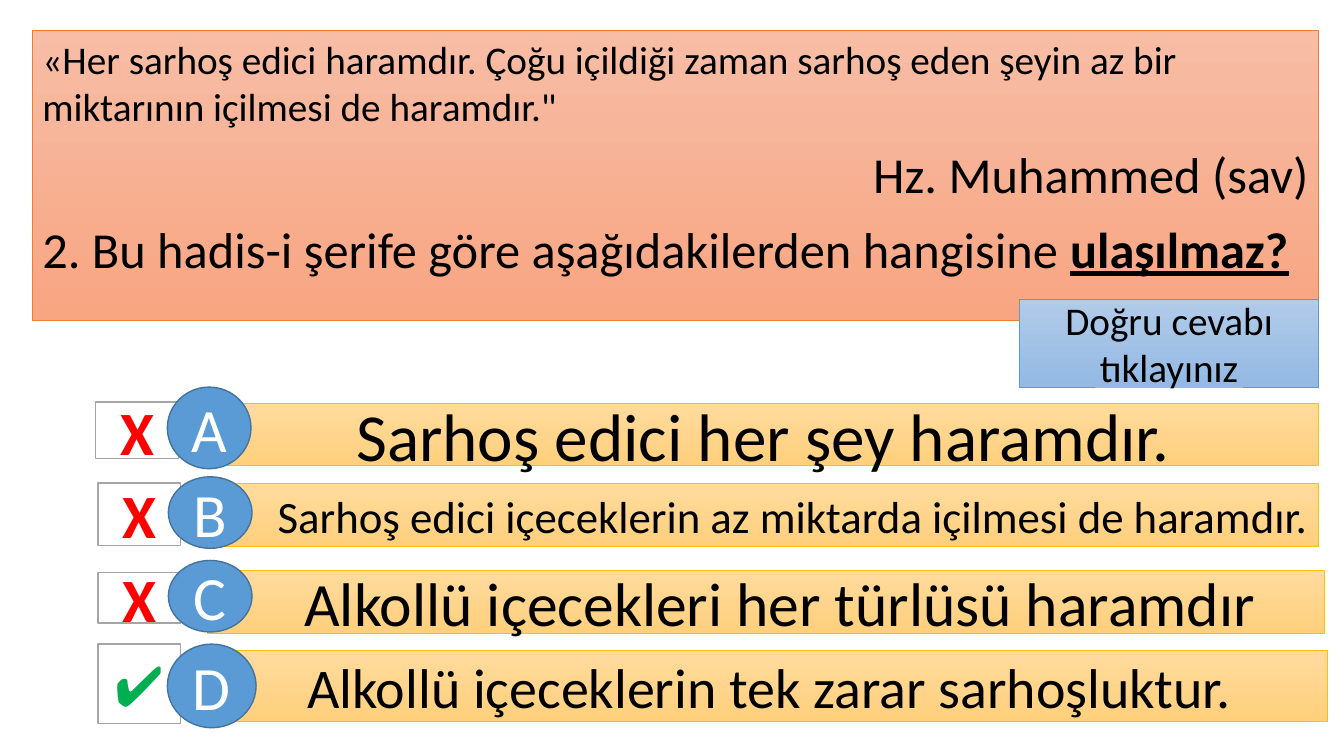
import pptx
import pptx.util
import pptx.dml.color
import pptx.enum.shapes
import pptx.enum.text
from pptx.util import Inches

COLORS = {
    "black": "000000", "white": "FFFFFF", "red": "FF0000", "green": "00B050",
    "gray": "A5A5A5", "blue": "5B9BD5", "navy": "43739E", "orange": "ED7D31", "gold": "FFC000",
    "salmon top": "F7BDA5", "salmon bottom": "F8A582",
    "sand top": "FFDB9E", "sand bottom": "FFD07C",
    "sky top": "B1CBE9", "sky bottom": "93B9E4",
}
ALIGN = pptx.enum.text.PP_ALIGN
SHAPE = pptx.enum.shapes.MSO_SHAPE

# letter, mark box, answer bar, circle, answer, size, alignment, left margin
ANSWERS = [
    ("A", (0.95, 3.99, 0.82, 0.56), (2.06, 4, 11.02, 0.62), (1.66, 3.84, 0.83, 0.81),
     "Sarhoş edici her şey haramdır.", 48, ALIGN.CENTER, 0.1),
    ("B", (0.97, 4.79, 0.82, 0.62), (1.96, 4.8, 11.12, 0.62), (1.67, 4.73, 0.83, 0.71),
     "Sarhoş edici içeceklerin az miktarda içilmesi de haramdır.", 32, ALIGN.RIGHT, 0.1),
    ("C", (0.97, 5.68, 0.82, 0.5), (2.06, 5.66, 11.08, 0.62), (1.67, 5.56, 0.83, 0.71),
     "Alkollü içecekleri her türlüsü haramdır", 44, ALIGN.CENTER, 0.38),
    ("D", (0.97, 6.39, 0.82, 0.79), (2.09, 6.45, 11.08, 0.71), (1.66, 6.39, 0.88, 0.83),
     "Alkollü içeceklerin tek zarar sarhoşluktur.", 40, ALIGN.CENTER, 0.1),
]
CORRECT = "D"


def rgb(name):
    return pptx.dml.color.RGBColor.from_string(COLORS[name])


def add_text(paragraph, text, size, color="black", bold=False, underline=False,
             align=ALIGN.CENTER):
    paragraph.alignment = align
    run = paragraph.add_run()
    run.text = text
    font = run.font
    font.name = "Calibri"
    font.size = pptx.util.Pt(size)
    font.bold = bold
    font.underline = underline
    font.color.rgb = rgb(color)


def paint(shape, fill, line, line_width):
    """Fill with one colour, or top to bottom with a pair of colours."""
    if isinstance(fill, tuple):
        shape.fill.gradient()
        shape.fill.gradient_angle = 270
        for stop, color in zip(shape.fill.gradient_stops, fill):
            stop.color.rgb = rgb(color)
    else:
        shape.fill.solid()
        shape.fill.fore_color.rgb = rgb(fill)
    shape.line.color.rgb = rgb(line)
    shape.line.width = pptx.util.Pt(line_width)


def add_box(slide, bounds, text, size, fill, line, line_width=1.0,
            kind=SHAPE.RECTANGLE, margin_left=0.1, **text_format):
    shape = slide.shapes.add_shape(kind, *map(Inches, bounds))
    shape.shadow.inherit = False
    paint(shape, fill, line, line_width)
    frame = shape.text_frame
    frame.word_wrap = True
    frame.margin_left = Inches(margin_left)
    frame.vertical_anchor = pptx.enum.text.MSO_ANCHOR.MIDDLE
    add_text(frame.paragraphs[0], text, size, **text_format)


def add_plain_paragraph(frame, first=False):
    """Return a paragraph without the placeholder's bullet and indent."""
    paragraph = frame.paragraphs[0] if first else frame.add_paragraph()
    paragraph.space_before = pptx.util.Pt(10)
    paragraph.line_spacing = 1.0
    properties = paragraph._p.get_or_add_pPr()
    properties.set("marL", "0")
    properties.set("indent", "0")
    properties.append(pptx.oxml.parse_xml(
        '<a:buNone xmlns:a="http://schemas.openxmlformats.org/drawingml/2006/main"/>'))
    return paragraph


def fill_question(body):
    body.left, body.top, body.width, body.height = map(Inches, (0.32, 0.3, 12.76, 2.88))
    paint(body, ("salmon top", "salmon bottom"), "orange", 0.5)
    frame = body.text_frame
    frame.auto_size = pptx.enum.text.MSO_AUTO_SIZE.NONE
    add_text(add_plain_paragraph(frame, first=True),
             "«Her sarhoş edici haramdır. Çoğu içildiği zaman sarhoş eden şeyin "
             "az bir miktarının içilmesi de haramdır.\"", 28, align=ALIGN.LEFT)
    add_text(add_plain_paragraph(frame), "Hz. Muhammed (sav)", 36, align=ALIGN.RIGHT)
    question = add_plain_paragraph(frame)
    add_text(question, "2. Bu hadis-i şerife göre aşağıdakilerden hangisine ", 36,
             align=ALIGN.LEFT)
    add_text(question, "ulaşılmaz?", 36, bold=True, underline=True, align=ALIGN.LEFT)


def add_answer(slide, letter, mark_bounds, bar_bounds, circle_bounds,
               answer, size, align, margin_left):
    if letter == CORRECT:
        add_box(slide, mark_bounds, "✔", 40, "white", "gray", color="green")
    else:
        add_box(slide, mark_bounds, "X", 44, "white", "gray", color="red", bold=True)
    add_box(slide, bar_bounds, answer, size, ("sand top", "sand bottom"), "gold", 0.5,
            margin_left=margin_left, align=align)
    add_box(slide, circle_bounds, letter, 44, "blue", "navy", kind=SHAPE.OVAL, color="white")


def main():
    presentation = pptx.Presentation()
    presentation.slide_width = Inches(13.33)
    presentation.slide_height = Inches(7.5)
    slide = presentation.slides.add_slide(presentation.slide_layouts.get_by_name("Title and Content"))
    title = slide.shapes.title.element
    title.getparent().remove(title)
    fill_question(slide.placeholders[1])
    for answer in ANSWERS:
        add_answer(slide, *answer)
    add_box(slide, (10.11, 2.97, 2.97, 0.87), "Doğru cevabı tıklayınız", 28,
            ("sky top", "sky bottom"), "blue", 0.5)
    presentation.save("out.pptx")


if __name__ == "__main__":
    main()
